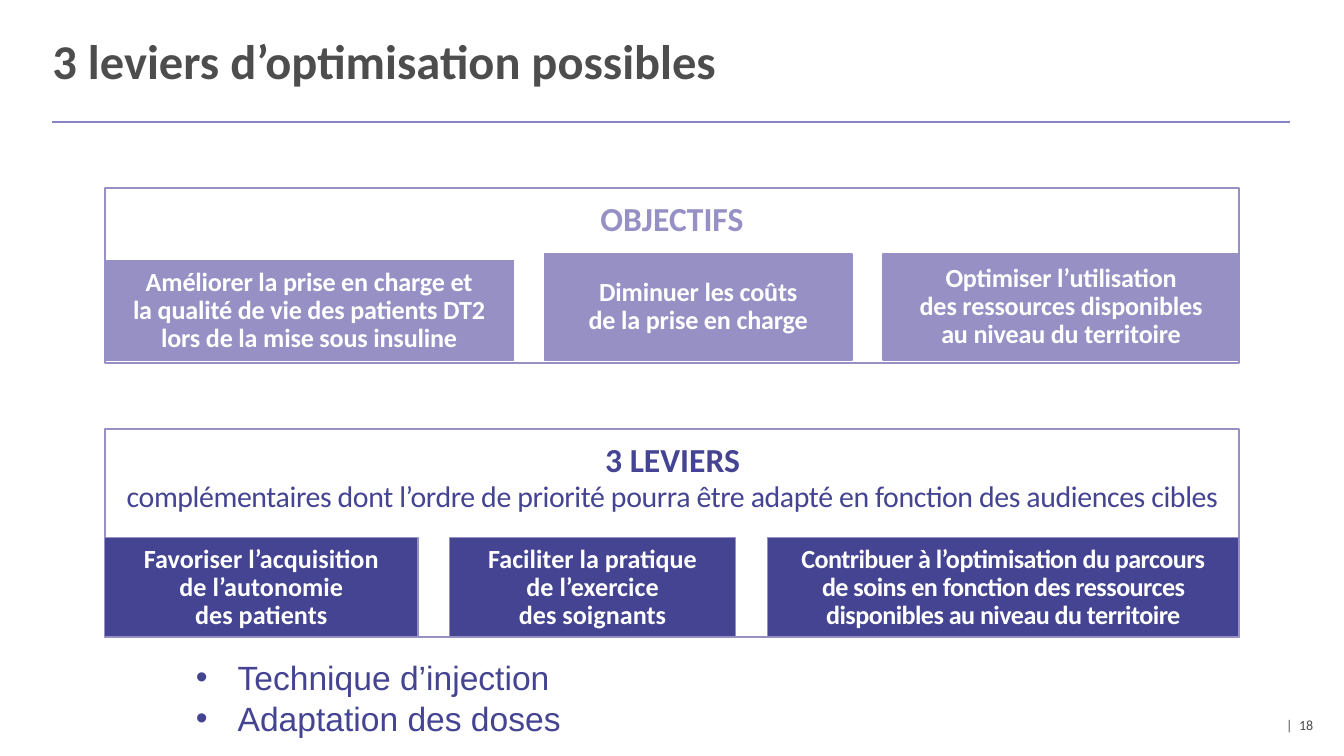
from pptx import Presentation
from pptx.dml.color import RGBColor
from pptx.enum.shapes import MSO_CONNECTOR, MSO_SHAPE
from pptx.enum.text import MSO_ANCHOR as ANCHOR, PP_ALIGN as ALIGN
from pptx.oxml.ns import qn
from pptx.util import Inches, Pt
from lxml.etree import SubElement

WHITE = RGBColor(0xFF, 0xFF, 0xFF)
GREY = RGBColor(0x4D, 0x4D, 0x4D)
RULE = RGBColor(0x86, 0x86, 0xC7)
LILAC = RGBColor(0x96, 0x90, 0xC4)
INDIGO = RGBColor(0x44, 0x44, 0x92)

# Content
TITLE = "3 leviers d’optimisation possibles"
PAGE = "|  18"
SUBTITLE = ("complémentaires dont l’ordre de priorité pourra être adapté "
            "en fonction des audiences cibles")
BULLETS = ["Technique d’injection", "Adaptation des doses"]

# Cards: text, width, height, letter spacing in hundredths of a point
PANELS = [
    dict(top=1.4, height=1.3, card_bottom=2.68, color=LILAC, inset=0.03,
         heading="OBJECTIFS", heading_box=(3.47, 1.42, 3.06, 0.4), subtitle=None,
         cards=[
             ("Améliorer la prise en charge et\nla qualité de vie des patients DT2\n"
              "lors de la mise sous insuline", 3.04, 0.74, -10),
             ("Diminuer les coûts\nde la prise en charge", 2.29, 0.79, -10),
             ("Optimiser l’utilisation\ndes ressources disponibles\n"
              "au niveau du territoire", 2.65, 0.79, -10)]),
    dict(top=3.19, height=1.55, card_bottom=4.74, color=INDIGO, inset=0.1,
         heading="3 LEVIERS", heading_box=(0.8, 3.22, 8.41, 0.96), subtitle=SUBTITLE,
         cards=[
             ("Favoriser l’acquisition\nde l’autonomie\ndes patients", 2.33, 0.74, 0),
             ("Faciliter la pratique\nde l’exercice\ndes soignants", 2.13, 0.74, 0),
             ("Contribuer à l’optimisation du parcours\nde soins en fonction des ressources "
              "disponibles au niveau du territoire", 3.51, 0.74, -30)]),
]
PANEL_LEFT, PANEL_WIDTH = 0.78, 8.44

# A 16:9 slide, 10 inches wide
prs = Presentation()
prs.slide_width = Inches(10)
prs.slide_height = prs.slide_width * 9 // 16
slide = prs.slides.add_slide(prs.slide_layouts[5])
shapes = slide.shapes


def inches(*lengths):
    return [Inches(length) for length in lengths]


def set_insets(frame, x, y):
    frame.margin_left = frame.margin_right = Inches(x)
    frame.margin_top = frame.margin_bottom = Inches(y)


def write(para, text, size, color, bold=False, align=ALIGN.LEFT, name="Calibri", spacing=0):
    para.text = text
    para.alignment = align
    font = para.font
    font.name, font.size, font.bold = name, Pt(size), bold
    font.color.rgb = color
    if spacing:
        for run in para.runs:
            run.font._element.set("spc", str(spacing))


def add_text_frame(*box):
    frame = shapes.add_textbox(*inches(*box)).text_frame
    frame.word_wrap = True
    return frame


def add_box(left, top, width, height, fill, line_width):
    box = shapes.add_shape(MSO_SHAPE.RECTANGLE, *inches(left, top, width, height))
    box.shadow.inherit = False
    box.fill.solid()
    box.fill.fore_color.rgb = fill
    box.line.color.rgb = LILAC
    box.line.width = Pt(line_width)
    return box


# Title, rule and page number
title = shapes.title
title.left, title.top, title.width, title.height = inches(0.39, 0.13, 9.36, 0.69)
set_insets(title.text_frame, 0, 0)
title.text_frame.vertical_anchor = ANCHOR.MIDDLE
heading = title.text_frame.paragraphs[0]
write(heading, TITLE, 26, GREY, bold=True)
heading.line_spacing = 0.9

rule = shapes.add_connector(MSO_CONNECTOR.STRAIGHT, *inches(0.39, 0.91, 9.6, 0.91))
rule.line.color.rgb = RULE
rule.line.width = Pt(1)
SubElement(rule._element.spPr, qn("a:effectLst"))

page = add_text_frame(9.57, 5.33, 0.53, 0.19)
set_insets(page, 0, 0)
write(page.paragraphs[0], PAGE, 7.5, GREY)

# Panels, each with a heading and a row of equally spaced cards
for panel in PANELS:
    add_box(PANEL_LEFT, panel["top"], PANEL_WIDTH, panel["height"], WHITE, 1)

    cards = panel["cards"]
    gap = (PANEL_WIDTH - sum(card[1] for card in cards)) / (len(cards) - 1)
    left = PANEL_LEFT
    for text, width, height, spacing in cards:
        card = add_box(left, panel["card_bottom"] - height, width, height, panel["color"], 0.75)
        frame = card.text_frame
        frame.word_wrap = True
        frame.vertical_anchor = ANCHOR.MIDDLE
        set_insets(frame, panel["inset"], 0.05)
        para = frame.paragraphs[0]
        write(para, text, 14, WHITE, True, ALIGN.CENTER, spacing=spacing)
        para.line_spacing = Pt(15)
        left += width + gap

    frame = add_text_frame(*panel["heading_box"])
    write(frame.paragraphs[0], panel["heading"], 18, panel["color"], True, ALIGN.CENTER)
    if panel["subtitle"]:
        para = frame.add_paragraph()
        write(para, panel["subtitle"], 16, panel["color"], align=ALIGN.CENTER, spacing=-20)
        para.line_spacing = Pt(15.8)
        para.space_before = Pt(2.2)

# Bullets under the levers
frame = add_text_frame(1.36, 4.84, 3.41, 0.71)
for i, text in enumerate(BULLETS):
    para = frame.add_paragraph() if i else frame.paragraphs[0]
    props = para._p.get_or_add_pPr()
    props.set("marL", str(Inches(0.31)))
    props.set("indent", str(-Inches(0.31)))
    SubElement(props, qn("a:buFont")).set("typeface", "Arial")
    SubElement(props, qn("a:buChar")).set("char", "•")
    write(para, text, 18, INDIGO, name="Arial")

prs.save("out.pptx")
